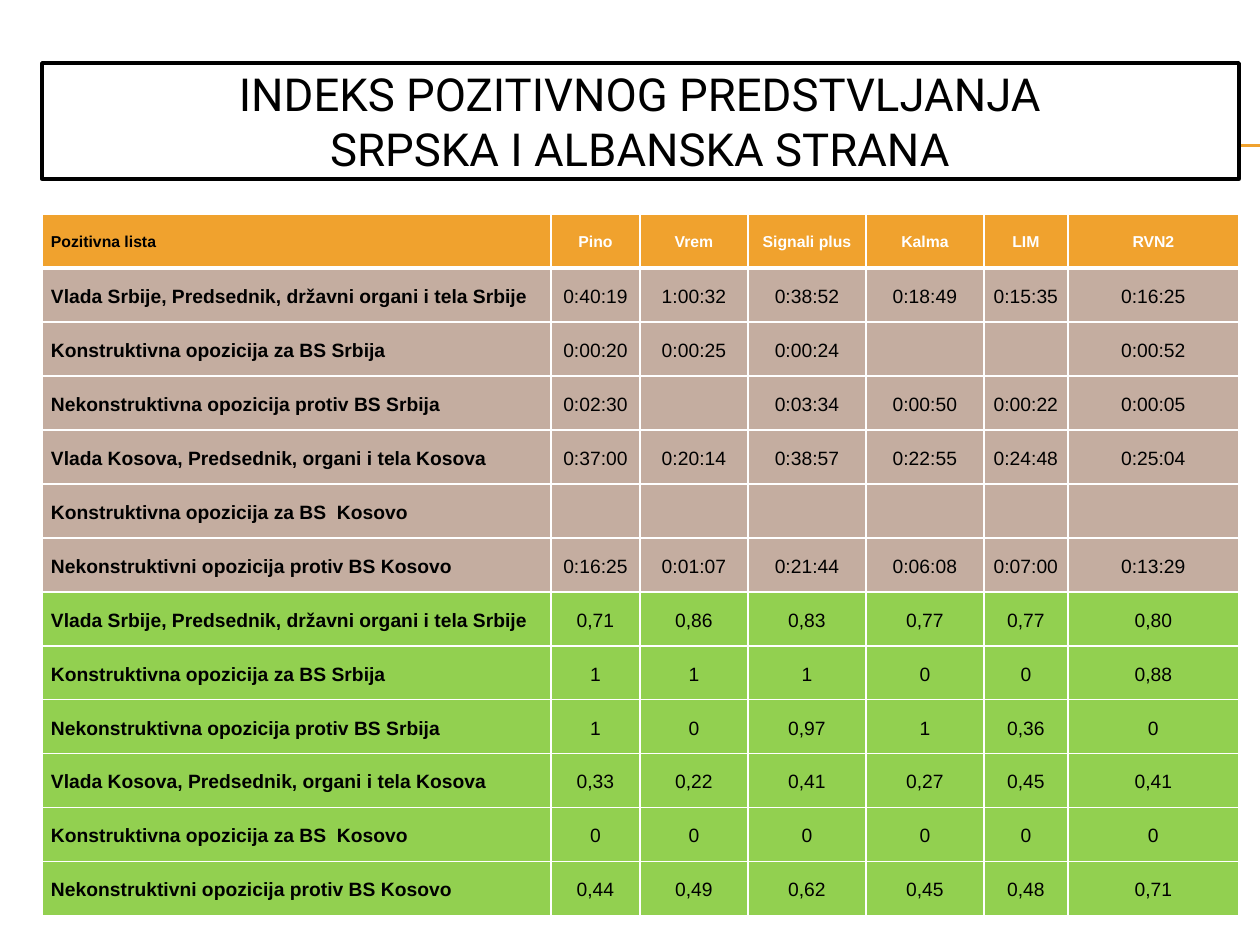
from dataclasses import dataclass

from lxml import etree
from pptx import Presentation
from pptx.dml.color import RGBColor
from pptx.enum.shapes import MSO_CONNECTOR
from pptx.enum.text import MSO_ANCHOR, MSO_AUTO_SIZE, PP_ALIGN
from pptx.oxml.ns import qn
from pptx.util import Pt

STRAIGHT = MSO_CONNECTOR.STRAIGHT
MIDDLE = MSO_ANCHOR.MIDDLE
NO_AUTOFIT = MSO_AUTO_SIZE.NONE
LEFT, CENTER = PP_ALIGN.LEFT, PP_ALIGN.CENTER
TITLE_ONLY = 5
EMU_PER_PX = 914400 / 126


@dataclass(frozen=True)
class Theme:
    black: str = "000000"
    white: str = "FFFFFF"
    accent: str = "F0A22E"
    durations: str = "C4ADA0"
    indexes: str = "92D050"
    title_font: str = "Roboto"
    table_font: str = "Arial"
    title_size: int = 26
    header_size: int = 9
    body_size: int = 11


def px(length):
    return round(length * EMU_PER_PX)


def rgb(color):
    return RGBColor.from_string(color)


class SlideBuilder:
    def __init__(self, slide, theme):
        self.slide = slide
        self.theme = theme

    def style(self, paragraph, name, size, color, align, bold=False):
        paragraph.alignment = align
        font = paragraph.font
        font.name, font.size, font.bold = name, Pt(size), bold
        font.color.rgb = rgb(color)

    def rule(self, left, right, y):
        line = self.slide.shapes.add_connector(STRAIGHT, px(left), px(y), px(right), px(y))
        line.line.color.rgb = rgb(self.theme.accent)
        line.line.width = Pt(0.75)
        etree.SubElement(line._element.spPr, qn("a:effectLst"))

    def title(self, text, left, top, width, height):
        """Fill the title placeholder and bring it in front of what is drawn so far."""
        title = self.slide.shapes.title
        title.left, title.top, title.width, title.height = map(px, (left, top, width, height))
        title.fill.solid()
        title.fill.fore_color.rgb = rgb(self.theme.white)
        title.line.color.rgb = rgb(self.theme.black)
        title.line.width = Pt(2)
        frame = title.text_frame
        frame.text = text
        frame.auto_size = NO_AUTOFIT
        frame.vertical_anchor = MIDDLE
        self.style(frame.paragraphs[0], self.theme.title_font, self.theme.title_size,
                   self.theme.black, CENTER)
        self.slide.shapes._spTree.append(title._element)

    def borders(self, cell, top, bottom):
        properties = cell._tc.get_or_add_tcPr()
        for side, points in (("L", 1), ("R", 1), ("T", top), ("B", bottom)):
            border = etree.SubElement(properties, qn(f"a:ln{side}"), w=str(Pt(points)))
            fill = etree.SubElement(border, qn("a:solidFill"))
            etree.SubElement(fill, qn("a:srgbClr"), val=self.theme.white)

    def cell(self, cell, text, row, column, fill):
        theme = self.theme
        is_header, is_label = row == 0, column == 0
        self.borders(cell, top=3 if row == 1 else 1, bottom=3 if is_header else 1)
        cell.fill.solid()
        cell.fill.fore_color.rgb = rgb(fill)
        cell.vertical_anchor = MIDDLE
        cell.margin_left = cell.margin_right = px(9)
        cell.margin_top = cell.margin_bottom = 0
        cell.text = text
        paragraph = cell.text_frame.paragraphs[0]
        paragraph.line_spacing = 1.15
        self.style(paragraph, theme.table_font,
                   theme.header_size if is_header else theme.body_size,
                   theme.white if is_header and not is_label else theme.black,
                   LEFT if is_label else CENTER, bold=is_header or is_label)

    def table(self, rows, fills, left, top, widths, row_height):
        frame = self.slide.shapes.add_table(len(rows), len(widths), px(left), px(top),
                                            px(sum(widths)), px(row_height * len(rows)))
        table = frame.table
        for column, width in zip(table.columns, widths):
            column.width = px(width)
        for r, (texts, fill) in enumerate(zip(rows, fills)):
            table.rows[r].height = px(row_height)
            for c, text in enumerate(texts):
                self.cell(table.cell(r, c), text, r, c, fill)


HEADER = ["Pozitivna lista", "Pino", "Vrem", "Signali plus", "Kalma", "LIM", "RVN2"]
GROUPS = [
    "Vlada Srbije, Predsednik, državni organi i tela Srbije",
    "Konstruktivna opozicija za BS Srbija",
    "Nekonstruktivna opozicija protiv BS Srbija",
    "Vlada Kosova, Predsednik, organi i tela Kosova",
    "Konstruktivna opozicija za BS  Kosovo",
    "Nekonstruktivni opozicija protiv BS Kosovo",
]
DURATIONS = [
    ["0:40:19", "1:00:32", "0:38:52", "0:18:49", "0:15:35", "0:16:25"],
    ["0:00:20", "0:00:25", "0:00:24", "", "", "0:00:52"],
    ["0:02:30", "", "0:03:34", "0:00:50", "0:00:22", "0:00:05"],
    ["0:37:00", "0:20:14", "0:38:57", "0:22:55", "0:24:48", "0:25:04"],
    [""] * 6,
    ["0:16:25", "0:01:07", "0:21:44", "0:06:08", "0:07:00", "0:13:29"],
]
INDEXES = [
    ["0,71", "0,86", "0,83", "0,77", "0,77", "0,80"],
    ["1", "1", "1", "0", "0", "0,88"],
    ["1", "0", "0,97", "1", "0,36", "0"],
    ["0,33", "0,22", "0,41", "0,27", "0,45", "0,41"],
    ["0"] * 6,
    ["0,44", "0,49", "0,62", "0,45", "0,48", "0,71"],
]
COLUMN_WIDTHS = [509, 89, 108, 118, 118, 84, 171]


def main():
    theme = Theme()
    presentation = Presentation()
    presentation.slide_width, presentation.slide_height = px(1260), px(945)
    slide = presentation.slides.add_slide(presentation.slide_layouts[TITLE_ONLY])
    builder = SlideBuilder(slide, theme)

    for y in (145, 146):
        builder.rule(71, 1260, y)
    builder.title("INDEKS POZITIVNOG PREDSTVLJANJA\vSRPSKA I ALBANSKA STRANA",
                  42, 63, 1197, 116)

    body = [[group, *values] for block in (DURATIONS, INDEXES)
            for group, values in zip(GROUPS, block)]
    fills = ([theme.accent] + [theme.durations] * len(DURATIONS)
             + [theme.indexes] * len(INDEXES))
    builder.table([HEADER] + body, fills, 42, 214, COLUMN_WIDTHS, 54)
    presentation.save("out.pptx")


if __name__ == "__main__":
    main()
